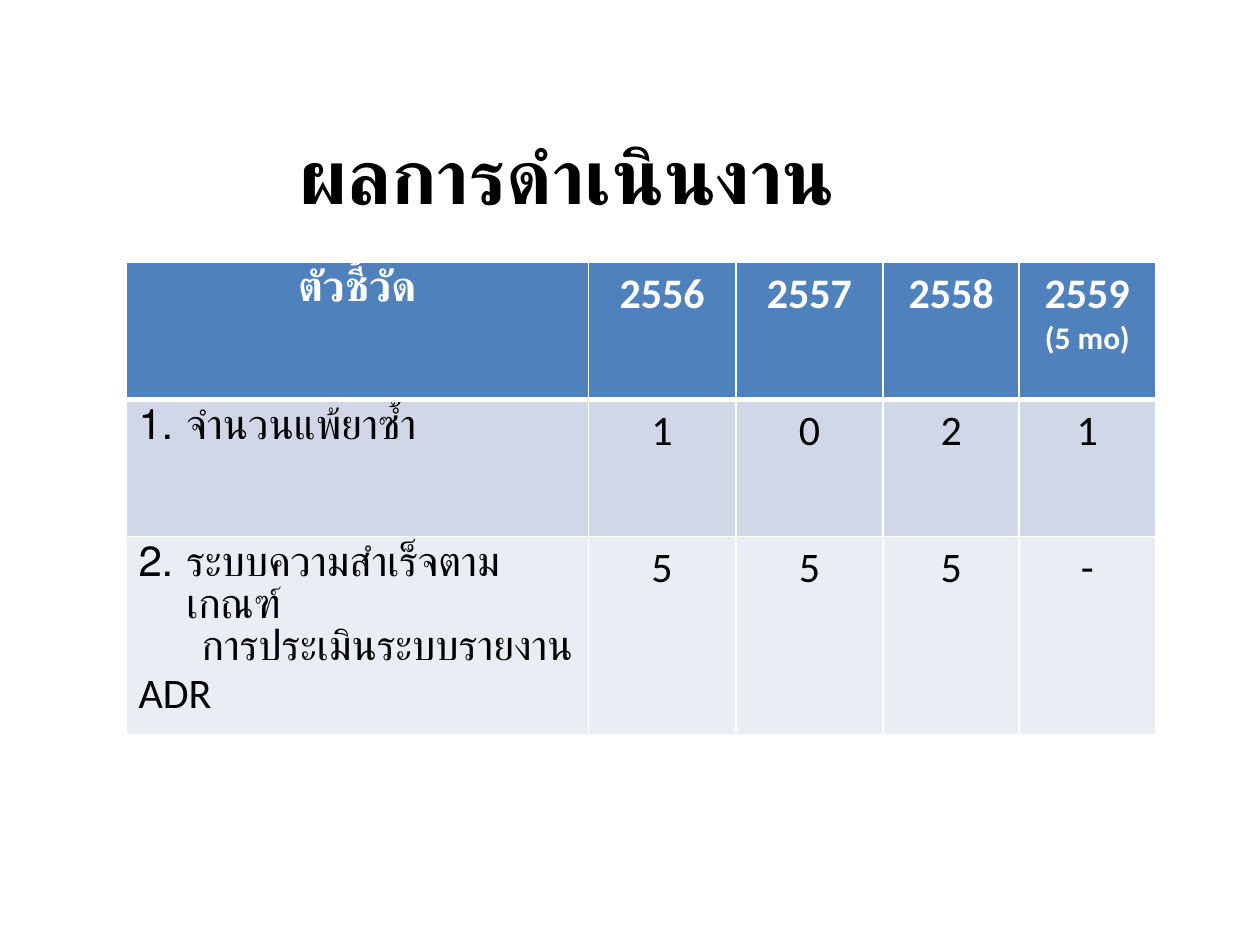
from lxml.etree import SubElement
from pptx import Presentation
from pptx.dml.color import RGBColor
from pptx.enum.text import MSO_ANCHOR, PP_ALIGN
from pptx.oxml.ns import qn
from pptx.util import Inches, Pt

TITLE = "ผลการดำเนินงาน"
ROWS = [
    ["ตัวชี้วัด", "2556", "2557", "2558", "2559\n(5 mo)"],
    ["จำนวนแพ้ยาซ้ำ", "1", "0", "2", "1"],
    ["ระบบความสำเร็จตามเกณฑ์\nการประเมินระบบรายงาน ADR", "5", "5", "5", "-"],
]
WIDTHS = [3.67, 1.17, 1.17, 1.08, 1.08]
HEIGHTS = [1.09, 1.09, 1.57]
COLORS = {"text": "000000", "line": "FFFFFF", "head": "4F81BD"}
BANDS = [COLORS["head"], "D0D8E8", "E9EDF4"]


def style(para, size, color, bold):
    """Format every run of a paragraph."""
    for run in para.runs:
        font = run.font
        font.name, font.size, font.bold = "Calibri", Pt(size), bold
        font.color.rgb = RGBColor.from_string(color)


def border(cell, row):
    """Draw the white cell borders, heavier below the header."""
    heavy = {(0, "lnB"), (1, "lnT")}
    props = cell._tc.get_or_add_tcPr()
    for side in ("lnL", "lnR", "lnT", "lnB"):
        width = Pt(3 if (row, side) in heavy else 1)
        line = SubElement(props, qn("a:" + side), w=str(width))
        fill = SubElement(line, qn("a:solidFill"))
        SubElement(fill, qn("a:srgbClr"), val=COLORS["line"])


def indent(para, left, first):
    """Set the left margin and first line indent; return the properties."""
    props = para._p.get_or_add_pPr()
    props.set("marL", str(Inches(left)))
    props.set("indent", str(Inches(first)))
    return props


def number(para, start):
    """Number a paragraph with a hanging indent."""
    props = indent(para, 0.38, -0.38)
    SubElement(props, qn("a:buFont"), typeface="+mj-lt")
    SubElement(props, qn("a:buAutoNum"), type="arabicPeriod", startAt=str(start))


def fill_cell(cell, text, row, col):
    """Write and format one table cell."""
    border(cell, row)
    cell.fill.solid()
    cell.fill.fore_color.rgb = RGBColor.from_string(BANDS[row])
    cell.text_frame.text = text
    color = COLORS["text" if row else "line"]
    for i, para in enumerate(cell.text_frame.paragraphs):
        if row and not col:
            if i:
                indent(para, 0, 0.5)
            else:
                number(para, row)
        else:
            para.alignment = PP_ALIGN.CENTER
        style(para, 18 if i and not row else 24, color, row == 0)


def main():
    """Build the results slide."""
    deck = Presentation()
    deck.slide_width, deck.slide_height = Inches(10), Inches(7.5)
    slide = deck.slides.add_slide(deck.slide_layouts[5])

    title = slide.shapes.title
    title.left, title.top = Inches(0), Inches(0.75)
    title.width, title.height = Inches(9), Inches(1.25)
    frame = title.text_frame
    frame.text = TITLE
    frame.vertical_anchor = MSO_ANCHOR.MIDDLE
    frame.paragraphs[0].alignment = PP_ALIGN.CENTER
    style(frame.paragraphs[0], 44, COLORS["text"], True)

    table = slide.shapes.add_table(
        len(ROWS), len(WIDTHS), Inches(1), Inches(2.08),
        Inches(sum(WIDTHS)), Inches(sum(HEIGHTS))).table
    for col, width in zip(table.columns, WIDTHS):
        col.width = Inches(width)
    for row, height in zip(table.rows, HEIGHTS):
        row.height = Inches(height)
    for r, texts in enumerate(ROWS):
        for c, text in enumerate(texts):
            fill_cell(table.cell(r, c), text, r, c)

    deck.save("out.pptx")


if __name__ == "__main__":
    main()
